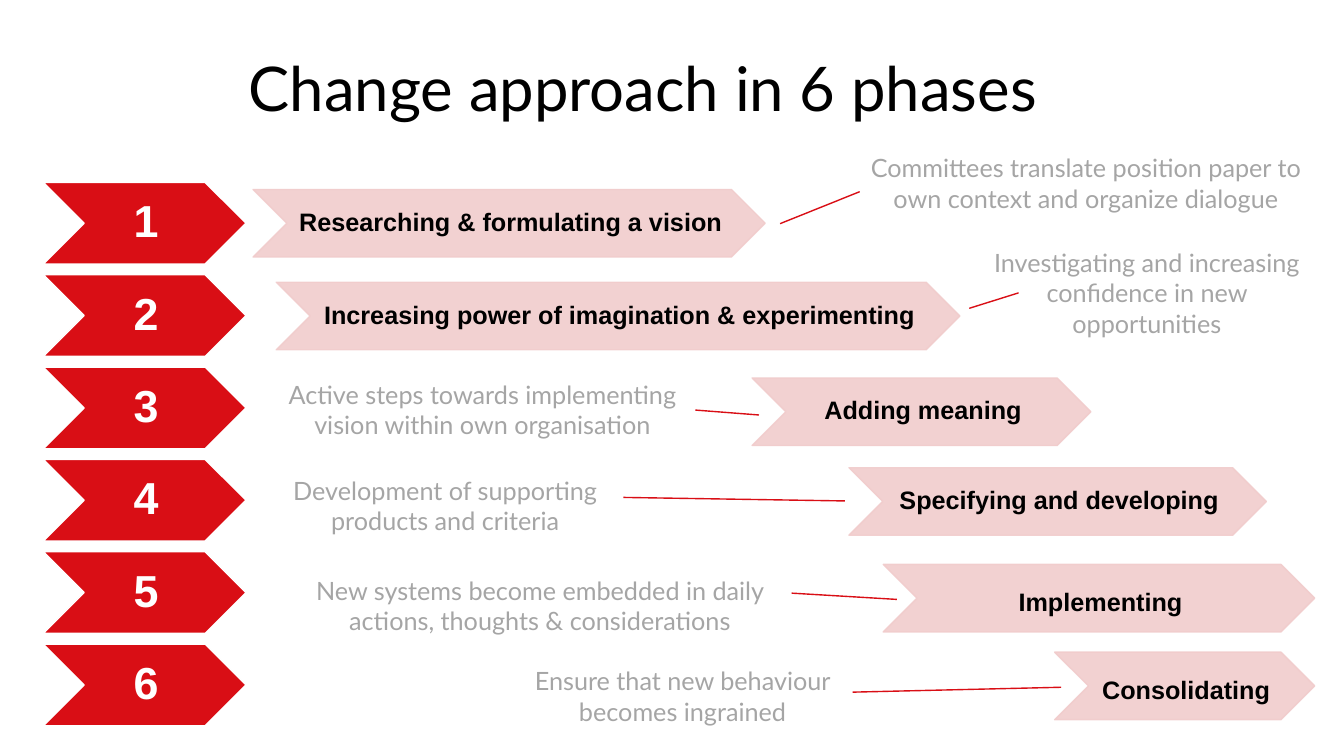
from dataclasses import dataclass

from lxml.etree import SubElement
from pptx import Presentation
from pptx.dml.color import RGBColor
from pptx.enum.shapes import MSO_SHAPE as SHAPE
from pptx.enum.text import MSO_ANCHOR as ANCHOR, PP_ALIGN as ALIGN
from pptx.oxml.ns import qn
from pptx.shapes.autoshape import Shape
from pptx.slide import Slide
from pptx.util import Inches, Pt

RED = RGBColor(0xD9, 0x0E, 0x15)
PINK = RGBColor(0xF1, 0xCC, 0xCC)
GREY = RGBColor(0xA5, 0xA5, 0xA5)
WHITE = RGBColor(0xFF, 0xFF, 0xFF)
BLACK = RGBColor(0x00, 0x00, 0x00)

FIRST_TOP, ROW_STEP = 1.81, 0.916
NUMBER_LEFT, NUMBER_W, NUMBER_H = 0.43, 2.01, 0.81
PHASE_H, NOTE_H = 0.67, 0.97


@dataclass
class Phase:
    name: str
    left: float
    top: float
    width: float
    drop: float = 0


@dataclass
class Note:
    text: str
    left: float
    top: float
    width: float
    leader: tuple[float, float, float, float]


PHASES = [
    Phase("Researching & formulating a vision", 2.51, 1.88, 5.08),
    Phase("Increasing power of imagination & experimenting", 2.74, 2.8, 6.78),
    Phase("Adding meaning", 7.46, 3.75, 3.36),
    Phase("Specifying and developing", 8.42, 4.64, 4.14),
    Phase("Implementing", 8.76, 5.6, 4.28, 0.1),
    Phase("Consolidating", 10.46, 6.47, 2.58, 0.1),
]

NOTES = [
    Note("Committees translate position paper to own context and organize dialogue",
         8.5, 1.33, 4.54, (0.59, 0.006, 0.917, -0.168)),
    Note("Investigating and increasing confidence in new opportunities",
         9.7, 2.42, 3.35, (0.659, -0.026, 0.501, 0.12)),
    Note("Active steps towards implementing vision within own organisation",
         2.58, 3.58, 4.41, (0.554, 1.122, 0.504, 0.979)),
    Note("Development of supporting products and criteria",
         2.49, 4.53, 3.85, (0.454, 1.53, 0.418, 0.959)),
    Note("New systems become embedded in daily actions, thoughts & considerations",
         2.76, 5.52, 5.19, (0.44, 1.182, 0.376, 0.981)),
    Note("Ensure that new behaviour becomes ingrained",
         4.88, 6.42, 3.78, (0.411, 1.493, 0.461, 0.946)),
]


def write(sp: Shape, text: str, size: float, font: str, color: RGBColor,
          bold: bool = False, spacing: float = 0.9) -> None:
    tf = sp.text_frame
    tf.word_wrap = True
    tf.vertical_anchor = ANCHOR.MIDDLE
    p = tf.paragraphs[0]
    p.alignment = ALIGN.CENTER
    p.line_spacing = spacing
    r = p.add_run()
    r.text = text
    r.font.size = Pt(size)
    r.font.name = font
    r.font.bold = bold
    r.font.color.rgb = color


def add_outlined(slide: Slide, kind: SHAPE, left: float, top: float, width: float,
                 height: float, fill: RGBColor, line: RGBColor) -> Shape:
    sp = slide.shapes.add_shape(kind, Inches(left), Inches(top), Inches(width), Inches(height))
    sp.shadow.inherit = False
    sp.fill.solid()
    sp.fill.fore_color.rgb = fill
    sp.line.color.rgb = line
    sp.line.width = Pt(1)
    return sp


def add_chevron(slide: Slide, left: float, top: float, width: float, height: float,
                fill: RGBColor, line: RGBColor, text: str, size: float,
                color: RGBColor, drop: float = 0) -> Shape:
    sp = add_outlined(slide, SHAPE.CHEVRON, left, top, width, height, fill, line)
    label = slide.shapes.add_textbox(Inches(left + height / 2), Inches(top),
                                     Inches(width - height), Inches(height))
    tf = label.text_frame
    tf.margin_left, tf.margin_right = Inches(0.03), 0
    tf.margin_top, tf.margin_bottom = Inches(0.01 + drop), Inches(0.01)
    write(label, text, size, "Arial", color, bold=True)
    return sp


def set_opacity(sp: Shape, percent: int) -> None:
    for color in sp._element.spPr.iter(qn("a:srgbClr")):
        SubElement(color, qn("a:alpha")).set("val", str(percent * 1000))


def add_note(slide: Slide, note: Note) -> None:
    sp = add_outlined(slide, SHAPE.LINE_CALLOUT_1_NO_BORDER, note.left, note.top,
                      note.width, NOTE_H, WHITE, RED)
    for i, value in enumerate(note.leader):
        sp.adjustments[i] = value
    write(sp, note.text, 18, "Lato", GREY, spacing=1.0)


def main() -> None:
    prs = Presentation()
    prs.slide_width, prs.slide_height = Inches(13.33), Inches(7.5)
    slide = prs.slides.add_slide(prs.slide_layouts[5])

    title = slide.shapes.title
    title.left, title.top = Inches(0.99), Inches(0.18)
    title.width, title.height = Inches(10.78), Inches(1.45)
    write(title, "Change approach in 6 phases", 44, "Lato", BLACK)

    for i, phase in enumerate(PHASES):
        add_chevron(slide, NUMBER_LEFT, FIRST_TOP + i * ROW_STEP, NUMBER_W, NUMBER_H,
                    RED, WHITE, str(i + 1), 32, WHITE)
        sp = add_chevron(slide, phase.left, phase.top, phase.width, PHASE_H,
                         PINK, PINK, phase.name, 18, BLACK, phase.drop)
        set_opacity(sp, 90)

    for note in NOTES:
        add_note(slide, note)

    prs.save("out.pptx")


if __name__ == "__main__":
    main()
